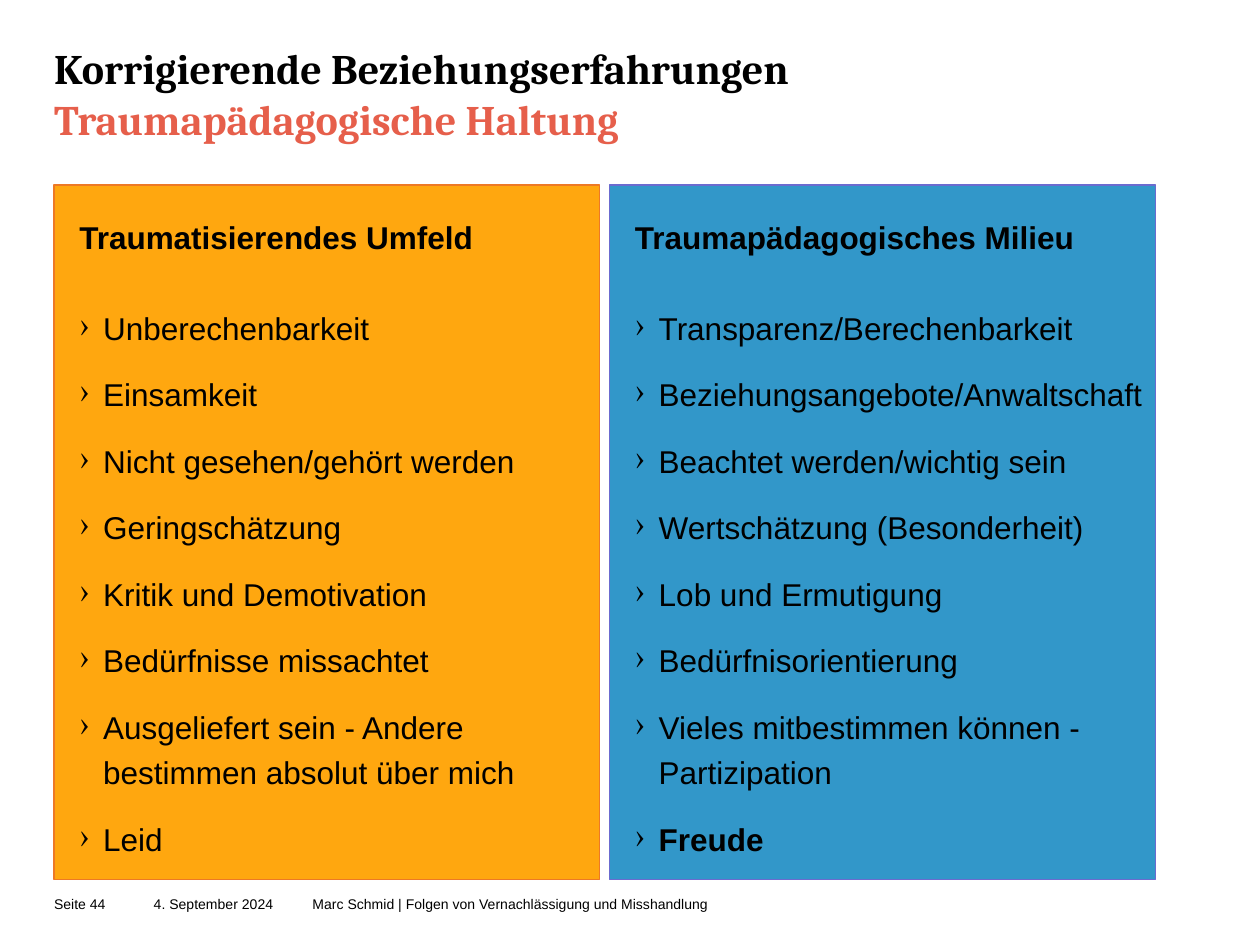
import pptx
import pptx.dml.color
import pptx.enum.shapes
import pptx.enum.text
import pptx.util
from lxml import etree
from pptx.util import Cm, Pt

TITLE = [("Korrigierende Beziehungserfahrungen", "000000"),
         ("Traumapädagogische Haltung", "E65F4B")]
PANELS = [
    ("Traumatisierendes Umfeld", "FFA70F", "ED7925", [
        "Unberechenbarkeit",
        "Einsamkeit",
        "Nicht gesehen/gehört werden",
        "Geringschätzung",
        "Kritik und Demotivation",
        "Bedürfnisse missachtet",
        "Ausgeliefert sein - Andere bestimmen absolut über mich",
        "Leid",
    ]),
    ("Traumapädagogisches Milieu", "3297C9", "6B6BCF", [
        "Transparenz/Berechenbarkeit",
        "Beziehungsangebote/Anwaltschaft",
        "Beachtet werden/wichtig sein",
        "Wertschätzung (Besonderheit)",
        "Lob und Ermutigung",
        "Bedürfnisorientierung",
        "Vieles mitbestimmen können - Partizipation",
        "Freude",
    ]),
]
BOLD_ITEMS = {"Freude"}
FOOTER = [("Seite 44", 1.09, 1.6),
          ("4. September 2024", 3.1, 3),
          ("Marc Schmid | Folgen von Vernachlässigung und Misshandlung", 6.3, 8.2)]
LEFT, PANEL_TOP, PANEL_W, PANEL_H, GAP = 1.09, 3.73, 11, 14, 0.2
INDENT = 0.48


def rgb(color):
    return pptx.dml.color.RGBColor.from_string(color)


def set_font(font, size, color="000000", bold=False, name="Arial"):
    font.name, font.size, font.bold = name, Pt(size), bold
    font.color.rgb = rgb(color)


def set_frame(tf, anchor, left=0, top=0, right=0, bottom=0):
    tf.word_wrap = True
    tf.vertical_anchor = anchor
    tf.margin_left, tf.margin_top = Cm(left), Cm(top)
    tf.margin_right, tf.margin_bottom = Cm(right), Cm(bottom)


def add_bullet(p):
    pPr = p._p.get_or_add_pPr()
    pPr.set("marL", str(Cm(INDENT)))
    pPr.set("indent", str(-Cm(INDENT)))
    bullet = etree.SubElement(pPr, pptx.oxml.ns.qn("a:buChar"))
    bullet.set("char", "›")


def add_text(s, left, top, width, height, anchor):
    tf = s.shapes.add_textbox(Cm(left), Cm(top), Cm(width), Cm(height)).text_frame
    set_frame(tf, anchor)
    return tf


def add_panel(s, left, heading, fill, line, items):
    sp = s.shapes.add_shape(pptx.enum.shapes.MSO_SHAPE.RECTANGLE,
                            Cm(left), Cm(PANEL_TOP), Cm(PANEL_W), Cm(PANEL_H))
    sp.shadow.inherit = False
    sp.fill.solid()
    sp.fill.fore_color.rgb = rgb(fill)
    sp.line.color.rgb = rgb(line)
    sp.line.width = Pt(0.75)
    tf = sp.text_frame
    set_frame(tf, pptx.enum.text.MSO_ANCHOR.TOP, 0.51, 0.51, 0.2, 0.51)
    tf.text = "\n".join([heading] + items)
    for i, p in enumerate(tf.paragraphs):
        p.alignment = pptx.enum.text.PP_ALIGN.LEFT
        p.line_spacing = Pt(26)
        p.space_after = Pt(12 if i else 26)
        if i:
            add_bullet(p)
        set_font(p.runs[0].font, 18, bold=i == 0 or p.text in BOLD_ITEMS)


def main():
    prs = pptx.Presentation()
    prs.slide_width, prs.slide_height = Cm(25.4), Cm(19.05)
    s = prs.slides.add_slide(prs.slide_layouts[6])

    tf = add_text(s, LEFT, 0.86, 23.22, 2.49, pptx.enum.text.MSO_ANCHOR.TOP)
    p = tf.paragraphs[0]
    p.text = "\v".join(text for text, color in TITLE)
    for r, (text, color) in zip(p.runs, TITLE):
        set_font(r.font, 24, color, True, "Cambria")

    for i, panel in enumerate(PANELS):
        add_panel(s, LEFT + i * (PANEL_W + GAP), *panel)

    for text, left, width in FOOTER:
        tf = add_text(s, left, 17.83, width, 0.79, pptx.enum.text.MSO_ANCHOR.MIDDLE)
        tf.text = text
        set_font(tf.paragraphs[0].runs[0].font, 8)

    prs.save("out.pptx")


if __name__ == "__main__":
    main()
